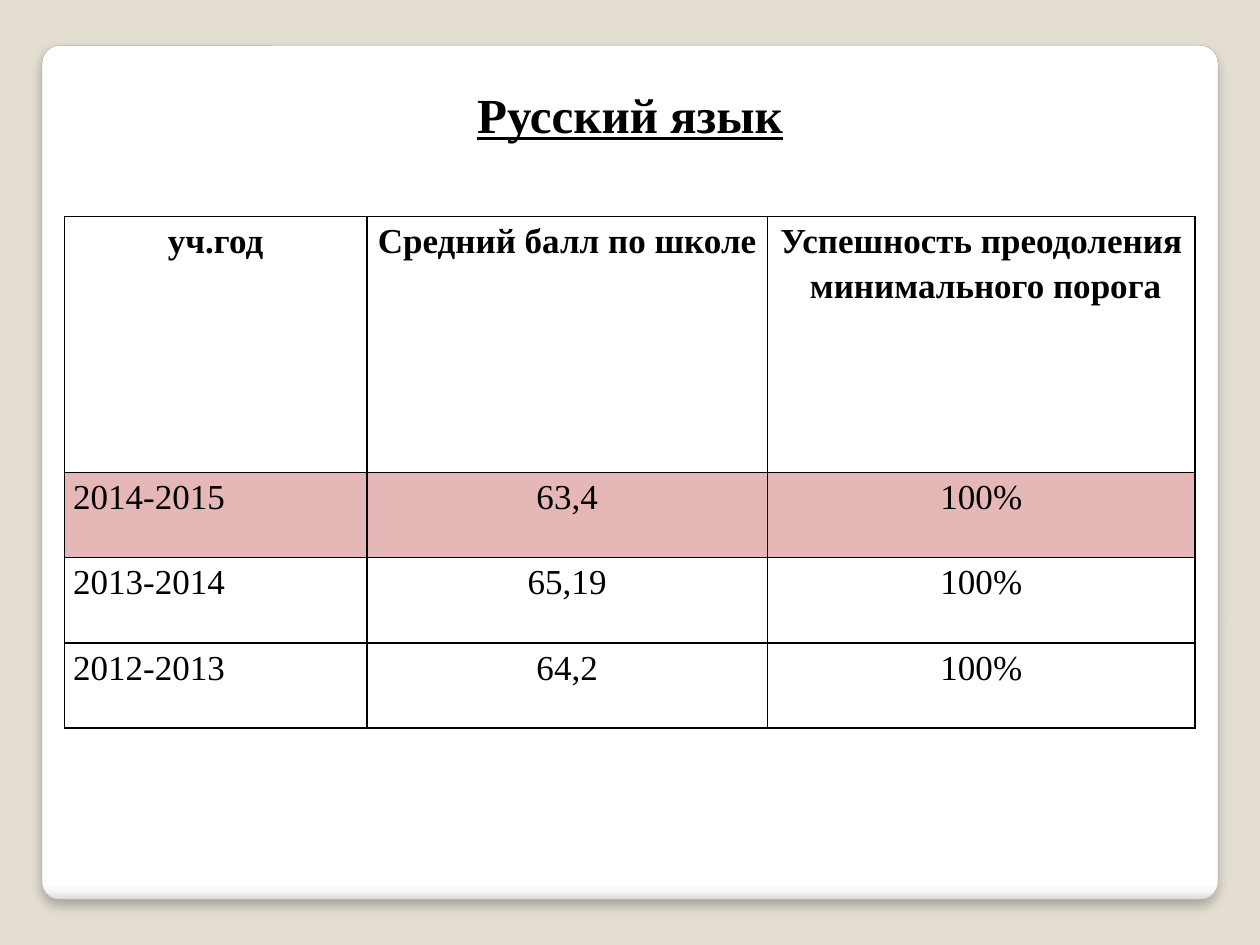
"""Build a slide with a table of Russian language exam results by school year."""
from lxml import etree
from pptx import Presentation
from pptx.dml.color import RGBColor
from pptx.enum.shapes import MSO_SHAPE
from pptx.enum.text import PP_ALIGN
from pptx.oxml.ns import qn
from pptx.util import Pt

ROUND_RECT = MSO_SHAPE.ROUNDED_RECTANGLE
LEFT, CENTER = PP_ALIGN.LEFT, PP_ALIGN.CENTER

FONT = "Times New Roman"
BLACK, BACKGROUND, PINK = "000000", "E3DED1", "E5B8B7"
TITLE = "Русский язык"
ROWS = [
    ("уч.год", "Средний балл по школе", "Успешность преодоления\n минимального порога"),
    ("2014-2015", "63,4", "100%"),
    ("2013-2014", "65,19", "100%"),
    ("2012-2013", "64,2", "100%"),
]
HIGHLIGHT_ROW = 1
COL_WIDTHS = (172.8, 229, 244.4)
ROW_HEIGHTS = (146.2, 48.7, 48.7, 48.7)
PANEL_STOPS = [(0, "FFFFFF"), (98, "FFFFFF"), (99, "F7F7F7"), (100, "DADADA")]


def rgb(value):
    return RGBColor.from_string(value)


def add(parent, tag, **attrs):
    return etree.SubElement(parent, qn(tag), {k: str(v) for k, v in attrs.items()})


def style(p, size, align, bold):
    p.alignment = align
    p.font.name, p.font.size, p.font.bold = FONT, Pt(size), bold
    p.font.color.rgb = rgb(BLACK)


def add_panel(slide):
    sp = slide.shapes.add_shape(ROUND_RECT, Pt(24), Pt(26), Pt(672), Pt(488))
    sp.adjustments[0] = 0.021
    sp.line.color.rgb = rgb("A4A4A4")
    sp.line.width = Pt(0.16)
    sp.fill.gradient()
    sp.fill.gradient_angle = 270
    stops = sp.element.spPr.find(".//" + qn("a:gsLst"))
    for stop in list(stops):
        stops.remove(stop)
    for pos, color in PANEL_STOPS:
        add(add(stops, "a:gs", pos=pos * 1000), "a:srgbClr", val=color)
    sp.shadow.inherit = False
    shadow = add(sp.element.spPr.find(qn("a:effectLst")), "a:outerShdw",
                 blurRad=Pt(6), dist=Pt(4), dir=90 * 60000, algn="t", rotWithShape=0)
    add(add(shadow, "a:srgbClr", val=BLACK), "a:alpha", val=25000)


def add_title(slide):
    tf = slide.shapes.add_textbox(Pt(129.5), Pt(44.6), Pt(461), Pt(108.7)).text_frame
    tf.word_wrap = True
    p = tf.paragraphs[0]
    p.text = TITLE
    style(p, 28, CENTER, True)
    p.font.underline = True


def add_borders(cell):
    tc_pr = cell._tc.get_or_add_tcPr()
    for side in "LRTB":
        ln = add(tc_pr, f"a:ln{side}", w=Pt(1))
        add(add(ln, "a:solidFill"), "a:srgbClr", val=BLACK)


def add_results(slide):
    table = slide.shapes.add_table(len(ROWS), len(COL_WIDTHS), Pt(36.8), Pt(123.8),
                                   Pt(sum(COL_WIDTHS)), Pt(sum(ROW_HEIGHTS))).table
    table.first_row = table.horz_banding = False
    for col, width in zip(table.columns, COL_WIDTHS):
        col.width = Pt(width)
    for i, (row, height, texts) in enumerate(zip(table.rows, ROW_HEIGHTS, ROWS)):
        row.height = Pt(height)
        for j, (cell, text) in enumerate(zip(row.cells, texts)):
            cell.margin_left = cell.margin_right = Pt(5)
            cell.margin_top = cell.margin_bottom = 0
            add_borders(cell)
            if i == HIGHLIGHT_ROW:
                cell.fill.solid()
                cell.fill.fore_color.rgb = rgb(PINK)
            else:
                cell.fill.background()
            cell.text_frame.text = text
            for p in cell.text_frame.paragraphs:
                style(p, 20, LEFT if i and j == 0 else CENTER, i == 0)
                p.line_spacing = 1.15


def main():
    prs = Presentation()
    prs.slide_width, prs.slide_height = Pt(720), Pt(540)
    slide = prs.slides.add_slide(prs.slide_layouts[6])
    slide.background.fill.solid()
    slide.background.fill.fore_color.rgb = rgb(BACKGROUND)
    add_panel(slide)
    add_title(slide)
    add_results(slide)
    prs.save("out.pptx")


if __name__ == "__main__":
    main()
